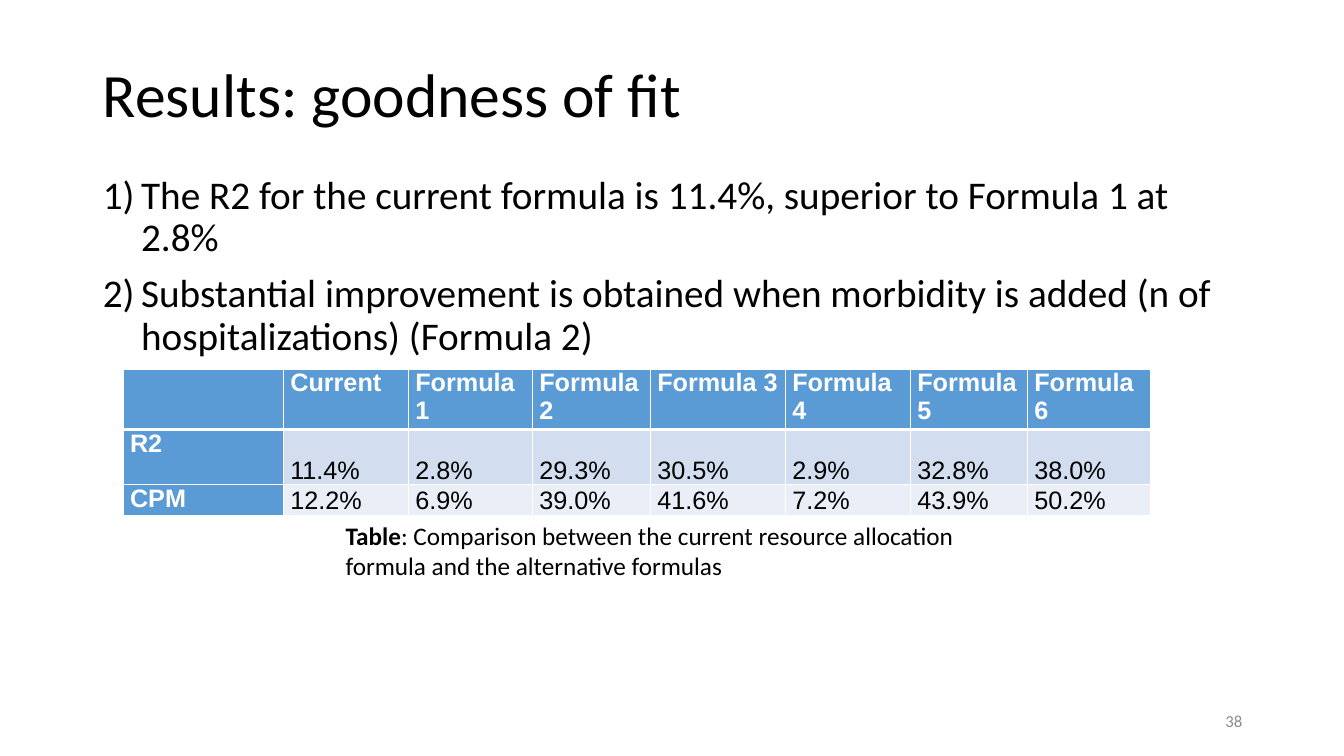
from lxml import etree
from pptx import Presentation
from pptx.dml.color import RGBColor
from pptx.enum.text import MSO_ANCHOR as Anchor, MSO_AUTO_SIZE as AutoSize, PP_ALIGN as Align
from pptx.oxml.ns import qn
from pptx.util import Inches, Pt

BLACK, WHITE, GREY, BLUE = "000000", "FFFFFF", "8C8C8C", "5B9BD5"
ROW_FILLS = [BLUE, "D2DEEF", "EAEFF7"]
COLUMN_WIDTHS = [1.59, 1.24, 1.23, 1.17, 1.34, 1.24, 1.16, 1.22]
ROW_HEIGHTS = [0.41, 0.55, 0.28]
FIT_ROWS = [
    ["", "Current"] + [f"Formula {number}" for number in range(1, 7)],
    ["R2", "11.4%", "2.8%", "29.3%", "30.5%", "2.9%", "32.8%", "38.0%"],
    ["CPM", "12.2%", "6.9%", "39.0%", "41.6%", "7.2%", "43.9%", "50.2%"],
]
FINDINGS = [
    "The R2 for the current formula is 11.4%, superior to Formula 1 at 2.8%",
    "Substantial improvement is obtained when morbidity is added "
    "(n of hospitalizations) (Formula 2)",
]


def color(hex_value):
    return RGBColor.from_string(hex_value)


def style_font(font, size, hex_value=BLACK, name="Calibri", bold=None):
    font.name, font.size, font.bold = name, Pt(size), bold
    font.color.rgb = color(hex_value)


def place(shape, left, top, width, height):
    shape.left, shape.top = Inches(left), Inches(top)
    shape.width, shape.height = Inches(width), Inches(height)


def add_text_box(slide, left, top, width, height):
    box = slide.shapes.add_textbox(*map(Inches, (left, top, width, height)))
    box.text_frame.word_wrap = True
    return box.text_frame


def fill_title(title, text):
    place(title, 0.92, 0.24, 11.5, 1.45)
    frame = title.text_frame
    frame.text = text
    frame.auto_size = AutoSize.NONE
    frame.vertical_anchor = Anchor.MIDDLE
    paragraph = frame.paragraphs[0]
    paragraph.alignment = Align.LEFT
    paragraph.line_spacing = 0.9
    style_font(paragraph.font, 44)


def fill_numbered_list(body, items):
    place(body, 0.92, 1.69, 11.5, 4.76)
    frame = body.text_frame
    frame.text = "\n".join(items)
    frame.auto_size = AutoSize.NONE
    for paragraph in frame.paragraphs:
        paragraph.line_spacing = 0.9
        paragraph.space_before = Pt(10)
        properties = paragraph._p.get_or_add_pPr()
        properties.set("marL", str(Inches(0.38)))
        properties.set("indent", str(Inches(-0.38)))
        etree.SubElement(properties, qn("a:buFont"), typeface="+mj-lt")
        etree.SubElement(properties, qn("a:buAutoNum"), type="arabicParenR")
        style_font(paragraph.font, 28)


def add_border(cell, side, points):
    line = etree.SubElement(cell._tc.get_or_add_tcPr(), qn(f"a:ln{side}"), w=str(Pt(points)))
    fill = etree.SubElement(line, qn("a:solidFill"))
    etree.SubElement(fill, qn("a:srgbClr"), val=WHITE)


def format_cell(cell, text, row, column):
    is_heading = row == 0 or column == 0
    cell.margin_left = cell.margin_right = Inches(0.07)
    cell.margin_top = cell.margin_bottom = 0
    cell.vertical_anchor = Anchor.TOP if is_heading else Anchor.BOTTOM
    for side in "LRTB":
        under_header = (row, side) in [(0, "B"), (1, "T")]
        add_border(cell, side, 3 if under_header else 1)
    cell.fill.solid()
    cell.fill.fore_color.rgb = color(BLUE if is_heading else ROW_FILLS[row])
    cell.text = text
    style_font(cell.text_frame.paragraphs[0].font, 18,
               WHITE if is_heading else BLACK, "Arial", is_heading)


def add_fit_table(slide):
    frame = slide.shapes.add_table(len(FIT_ROWS), len(COLUMN_WIDTHS), Inches(1.22),
                                   Inches(3.66), Inches(10.18), Inches(1.45))
    table = frame.table
    for column, width in zip(table.columns, COLUMN_WIDTHS):
        column.width = Inches(width)
    for row, height in zip(table.rows, ROW_HEIGHTS):
        row.height = Inches(height)
    for row, texts in enumerate(FIT_ROWS):
        for column, text in enumerate(texts):
            format_cell(table.cell(row, column), text, row, column)


def add_caption(slide, label, text):
    frame = add_text_box(slide, 3.33, 5.11, 6.68, 0.71)
    frame.auto_size = AutoSize.SHAPE_TO_FIT_TEXT
    paragraph = frame.paragraphs[0]
    style_font(paragraph.font, 18)
    label_run = paragraph.add_run()
    label_run.text = label
    label_run.font.bold = True
    paragraph.add_run().text = text


def add_slide_number(slide, number):
    frame = add_text_box(slide, 9.42, 6.95, 3, 0.4)
    frame.vertical_anchor = Anchor.MIDDLE
    paragraph = frame.paragraphs[0]
    paragraph.text = number
    paragraph.alignment = Align.RIGHT
    style_font(paragraph.font, 12, GREY)


def main():
    presentation = Presentation()
    presentation.slide_width, presentation.slide_height = Inches(13.33), Inches(7.5)
    slide = presentation.slides.add_slide(presentation.slide_layouts[1])
    fill_title(slide.shapes.title, "Results: goodness of fit")
    fill_numbered_list(slide.placeholders[1], FINDINGS)
    add_slide_number(slide, "38")
    add_caption(slide, "Table", ": Comparison between the current resource allocation "
                                "formula and the alternative formulas")
    add_fit_table(slide)
    presentation.save("out.pptx")


if __name__ == "__main__":
    main()
